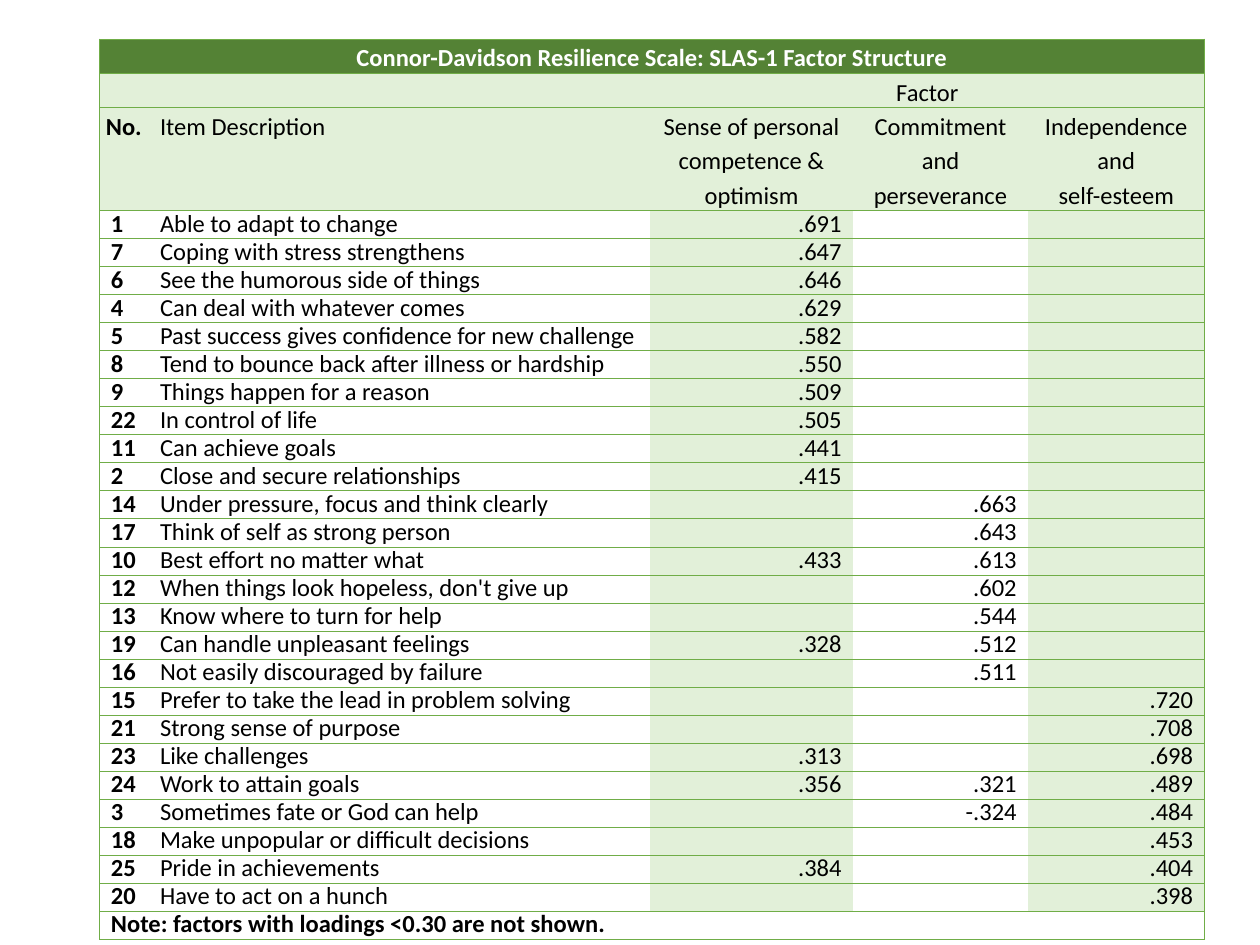
from lxml.etree import SubElement
from pptx import Presentation
from pptx.dml.color import RGBColor
from pptx.enum.text import MSO_ANCHOR as Anchor, PP_ALIGN as Align
from pptx.oxml.ns import qn
from pptx.util import Inches, Pt

DARK_GREEN = RGBColor(0x54, 0x82, 0x35)
PALE_GREEN = RGBColor(0xE2, 0xF0, 0xD9)
LINE_GREEN = RGBColor(0x70, 0xAD, 0x47)
WHITE = RGBColor(0xFF, 0xFF, 0xFF)
BLACK = RGBColor(0, 0, 0)

PLAIN_STYLE = "{2D5ABB26-0587-4C30-8999-92F81FD0307C}"
COLUMN_WIDTHS = [0.43, 3.94, 1.61, 1.39, 1.4]
HEADER_HEIGHTS = [0.27, 0.27, 0.8]
ITEM_HEIGHT = 0.22
TITLE = "Connor-Davidson Resilience Scale: SLAS-1 Factor Structure"
NOTE = "Note: factors with loadings <0.30 are not shown."
HEADINGS = [
    "No.",
    "Item Description",
    "Sense of personal competence & optimism",
    "Commitment and perseverance",
    "Independence and\nself-esteem",
]
ITEMS = [
    ("1", "Able to adapt to change", ".691", "", ""),
    ("7", "Coping with stress strengthens", ".647", "", ""),
    ("6", "See the humorous side of things", ".646", "", ""),
    ("4", "Can deal with whatever comes", ".629", "", ""),
    ("5", "Past success gives confidence for new challenge", ".582", "", ""),
    ("8", "Tend to bounce back after illness or hardship", ".550", "", ""),
    ("9", "Things happen for a reason", ".509", "", ""),
    ("22", "In control of life", ".505", "", ""),
    ("11", "Can achieve goals", ".441", "", ""),
    ("2", "Close and secure relationships", ".415", "", ""),
    ("14", "Under pressure, focus and think clearly", "", ".663", ""),
    ("17", "Think of self as strong person", "", ".643", ""),
    ("10", "Best effort no matter what", ".433", ".613", ""),
    ("12", "When things look hopeless, don't give up", "", ".602", ""),
    ("13", "Know where to turn for help", "", ".544", ""),
    ("19", "Can handle unpleasant feelings", ".328", ".512", ""),
    ("16", "Not easily discouraged by failure", "", ".511", ""),
    ("15", "Prefer to take the lead in problem solving", "", "", ".720"),
    ("21", "Strong sense of purpose", "", "", ".708"),
    ("23", "Like challenges", ".313", "", ".698"),
    ("24", "Work to attain goals", ".356", ".321", ".489"),
    ("3", "Sometimes fate or God can help", "", "-.324", ".484"),
    ("18", "Make unpopular or difficult decisions", "", "", ".453"),
    ("25", "Pride in achievements", ".384", "", ".404"),
    ("20", "Have to act on a hunch", "", "", ".398"),
]


def write_text(cell, text, align=Align.LEFT, anchor=Anchor.TOP, bold=False,
               color=BLACK, spacing=Pt(16), indent=0):
    """Write text into a cell, one paragraph per line."""
    cell.margin_left = cell.margin_right = Inches(0.05)
    cell.margin_top = cell.margin_bottom = 0
    cell.vertical_anchor = anchor
    cell.text_frame.text = text
    for para in cell.text_frame.paragraphs:
        para.alignment = align
        para.line_spacing = spacing
        if indent:
            for side in ("marL", "marR"):
                para._p.get_or_add_pPr().set(side, str(Inches(indent)))
        for span in para.runs:
            span.font.name = "Calibri"
            span.font.size = Pt(14)
            span.font.bold = bold
            span.font.color.rgb = color


def empty_cell(cell):
    """Keep a cell without text low enough for its row."""
    write_text(cell, "")
    para = cell.text_frame.paragraphs[0]
    SubElement(para._p, qn("a:endParaRPr"), sz="1000")


def paint_cell(cell, sides, fill=None):
    """Draw thin green lines on the given sides and fill the cell."""
    properties = cell._tc.get_or_add_tcPr()
    for side in sides:
        line = SubElement(properties, qn(f"a:ln{side}"), w=str(Pt(0.5)))
        solid = SubElement(line, qn("a:solidFill"))
        SubElement(solid, qn("a:srgbClr"), val=str(LINE_GREEN))
    if fill is None:
        cell.fill.background()
    else:
        cell.fill.solid()
        cell.fill.fore_color.rgb = fill


def fill_color(row, column, last_row):
    """Return the fill for a place in the grid, or None."""
    if row == 0:
        return DARK_GREEN
    if row < len(HEADER_HEIGHTS) or (row < last_row and column in (2, 4)):
        return PALE_GREEN
    return None


def paint_grid(table, last_row):
    """Line and fill every cell, with upright lines on the outside only."""
    last_column = len(COLUMN_WIDTHS) - 1
    for row in range(last_row + 1):
        for column in range(last_column + 1):
            cell = table.cell(row, column)
            reach = column + (cell.span_width if cell.is_merge_origin else 1)
            sides = ["L"] if column == 0 else []
            sides += ["R"] if reach > last_column else []
            paint_cell(cell, sides + ["T", "B"], fill_color(row, column, last_row))


def write_headers(table):
    """Write the title, the factor label and the column headings."""
    write_text(table.cell(0, 0), TITLE, align=Align.CENTER, bold=True,
               color=WHITE, spacing=1.15)
    write_text(table.cell(1, 2), "Factor", align=Align.CENTER, spacing=1.15)
    for column, heading in enumerate(HEADINGS):
        is_factor = column > 1
        write_text(table.cell(2, column), heading, spacing=1.15, bold=column == 0,
                   align=Align.CENTER if is_factor else Align.LEFT,
                   anchor=Anchor.MIDDLE if is_factor else Anchor.TOP)


def write_items(table):
    """Write one row for each item with its loadings."""
    for row, item in enumerate(ITEMS, len(HEADER_HEIGHTS)):
        for column, text in enumerate(item):
            if text:
                write_text(table.cell(row, column), text, bold=column == 0,
                           align=Align.RIGHT if column > 1 else Align.LEFT,
                           indent=0 if column == 1 else 0.04)


def place_loadings_table(page, left, top, width, height):
    """Place the table of factor loadings in the given box."""
    heights = HEADER_HEIGHTS + [ITEM_HEIGHT] * (len(ITEMS) + 1)
    last_row, last_column = len(heights) - 1, len(COLUMN_WIDTHS) - 1
    frame = page.shapes.add_table(last_row + 1, last_column + 1, Inches(left),
                                  Inches(top), Inches(width), Inches(height))
    table = frame.table
    table.first_row = table.horz_banding = False
    table._tbl.tblPr.find(qn("a:tableStyleId")).text = PLAIN_STYLE
    for column, size in zip(table.columns, COLUMN_WIDTHS):
        column.width = Inches(size)
    for row, size in zip(table.rows, heights):
        row.height = Inches(size)
    for cell in table.iter_cells():
        empty_cell(cell)
    for row, column in ((0, 0), (1, 2), (last_row, 0)):
        table.cell(row, column).merge(table.cell(row, last_column))
    write_headers(table)
    write_items(table)
    write_text(table.cell(last_row, 0), NOTE, bold=True, indent=0.04)
    paint_grid(table, last_row)


def main():
    """Build the deck and save it."""
    deck = Presentation()
    deck.slide_width, deck.slide_height = Inches(10), Inches(7.5)
    page = deck.slides.add_slide(deck.slide_layouts[6])
    place_loadings_table(page, 0.79, 0.31, 8.77, 7.12)
    deck.save("out.pptx")


if __name__ == "__main__":
    main()
